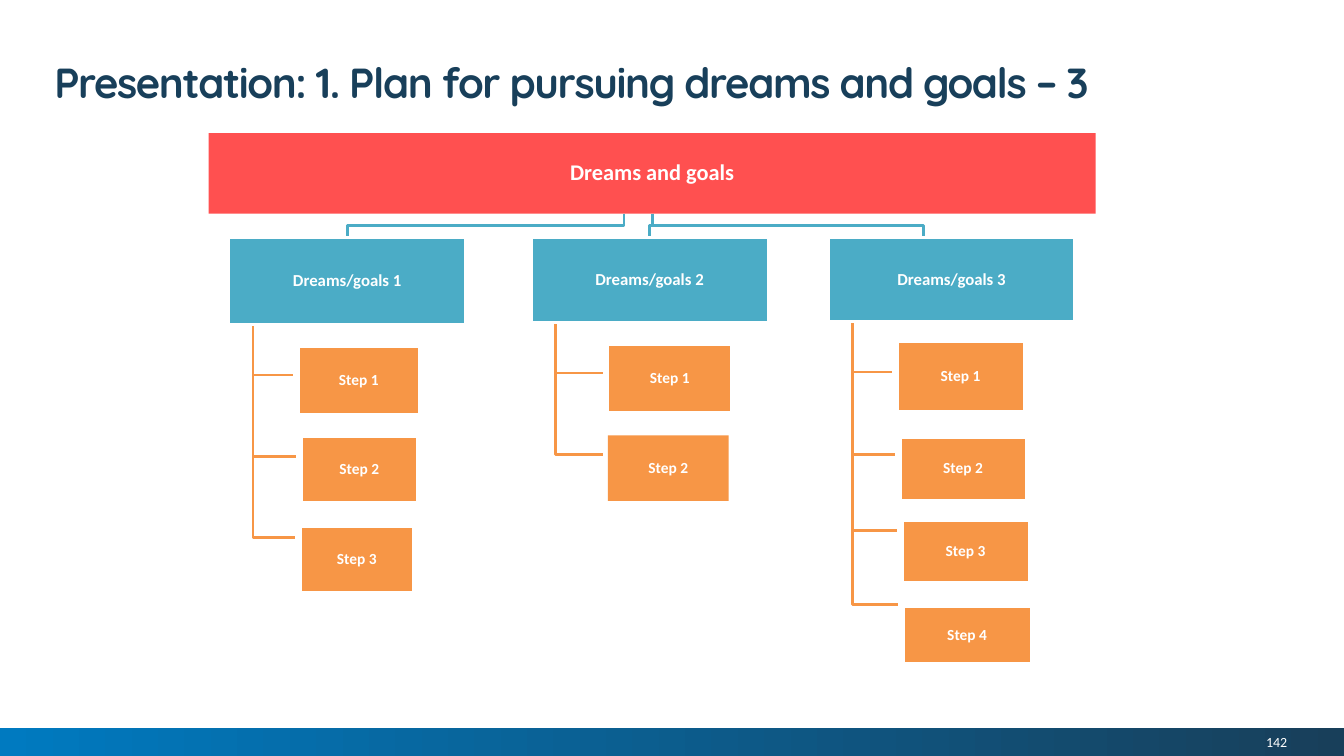
from pptx import Presentation
from pptx import util as u
from pptx.dml import color
from pptx.enum import shapes, text

COLORS = {
    "navy": "183F5A", "blue": "007AC0", "red": "FF5050",
    "teal": "4BACC6", "orange": "F79646", "white": "FFFFFF",
}
CELL = u.Inches(0.1)  # side of one grid column or row
COLUMNS, ROWS = 133.33, 75


def cells(count):
    return round(count * CELL)


def rgb(name):
    return color.RGBColor.from_string(COLORS[name])


class Chart:
    """Draws on one page; every length is in grid columns and rows."""

    font = "Calibri"
    line_width = u.Pt(2)

    def __init__(self, page):
        self.page = page

    def add_words(self, shape, words, size, tint="white", bold=True, font=None,
                  align=text.PP_ALIGN.CENTER, anchor=text.MSO_ANCHOR.MIDDLE,
                  spacing=0.9, inset=(0.1, 0.1), tracking=None):
        frame = shape.text_frame
        frame.word_wrap = True
        frame.vertical_anchor = anchor
        frame.margin_left = frame.margin_right = cells(inset[0])
        frame.margin_top = frame.margin_bottom = cells(inset[1])
        para = frame.paragraphs[0]
        para.alignment = align
        para.line_spacing = spacing
        span = para.add_run()
        span.text = words
        span.font.name = font or self.font
        span.font.size = u.Pt(size)
        span.font.bold = bold
        span.font.color.rgb = rgb(tint)
        if tracking is not None:
            span.font._element.set("spc", str(tracking))

    def label(self, place, words, size, **style):
        box = self.page.shapes.add_textbox(*map(cells, place))
        self.add_words(box, words, size, **style)

    def rectangle(self, place):
        box = self.page.shapes.add_shape(
            shapes.MSO_SHAPE.RECTANGLE, *map(cells, place))
        box.shadow.inherit = False
        box.line.fill.background()
        return box

    def box(self, place, tint, words, size, outlined=True):
        box = self.rectangle(place)
        box.fill.solid()
        box.fill.fore_color.rgb = rgb(tint)
        if outlined:
            box.line.color.rgb = rgb("white")
            box.line.width = self.line_width
        self.add_words(box, words, size)

    def band(self, place, start, end):
        band = self.rectangle(place)
        band.fill.gradient()
        band.fill.gradient_angle = 0
        for stop, tint in zip(band.fill.gradient_stops, (start, end)):
            stop.color.rgb = rgb(tint)

    def elbow(self, points, tint):
        first, *rest = [tuple(map(cells, point)) for point in points]
        builder = self.page.shapes.build_freeform(*first)
        builder.add_line_segments(rest, close=False)
        elbow = builder.convert_to_shape()
        elbow.shadow.inherit = False
        elbow.fill.background()
        elbow.line.color.rgb = rgb(tint)
        elbow.line.width = self.line_width


# Each goal: its box, where its line leaves the root and arrives,
# and its steps as (box, height of the branch, outlined)
ROOT = (20.7, 13.2, 88, 8)
GOALS = [
    ((22.7, 23.6, 23.5, 8.6), (61.9, 34.5), [
        ((29.6, 34.4, 12, 6.7), 37.2, True),
        ((29.9, 43.3, 11.5, 6.6), 45.3, True),
        ((29.8, 52.2, 11.2, 6.6), 53.3, True)]),
    ((52.7, 23.6, 23.5, 8.4), (64.7, 64.4), [
        ((60.3, 34.2, 12.3, 6.7), 37, True),
        ((60.3, 43.2, 12, 6.5), 45.1, False)]),
    ((82.2, 23.6, 24.4, 8.3), (64.7, 91.6), [
        ((89, 33.9, 12.6, 6.9), 36.9, True),
        ((89.3, 43.4, 12.5, 6.2), 45.1, True),
        ((89.5, 51.6, 12.6, 6.2), 52.6, True),
        ((89.6, 60.2, 12.7, 5.6), 60, True)]),
]
TRUNK_INSET, TIP_GAP = 2.4, 0.5
ROOT_BOTTOM, BEND, ARRIVAL = 21.2, 22.4, 23.4


def main():
    deck = Presentation()
    deck.slide_width, deck.slide_height = cells(COLUMNS), cells(ROWS)
    page = deck.slides.add_slide(deck.slide_layouts[6])
    chart = Chart(page)

    # Footer band and page number
    chart.band((0, 72.2, COLUMNS, 2.8), "blue", "navy")
    chart.label((109.7, 72.4, 18, 2.4), "142", 10, bold=False,
                align=text.PP_ALIGN.RIGHT, spacing=1.0, inset=(0, 0))

    # Title
    chart.label((4.4, 5.5, 107.1, 4.7),
                "Presentation: 1. Plan for pursuing dreams and goals – 3", 30,
                tint="navy", font="Quicksand", align=text.PP_ALIGN.LEFT,
                anchor=text.MSO_ANCHOR.TOP, spacing=u.Pt(33),
                inset=(1, 0.5), tracking=-100)

    # Goals with their steps
    for number, (place, (leave, arrive), steps) in enumerate(GOALS, 1):
        left, top, _, height = place
        trunk = left + TRUNK_INSET
        chart.elbow([(leave, ROOT_BOTTOM), (leave, BEND),
                     (arrive, BEND), (arrive, ARRIVAL)], "teal")
        for step, branch, _ in steps:
            chart.elbow([(trunk, top + height), (trunk, branch),
                         (step[0] - TIP_GAP, branch)], "orange")
        chart.box(place, "teal", f"Dreams/goals {number}", 12)
        for index, (step, _, outlined) in enumerate(steps, 1):
            chart.box(step, "orange", f"Step {index}", 11, outlined)

    # Root of the tree
    chart.box(ROOT, "red", "Dreams and goals", 16, outlined=False)

    deck.save("out.pptx")


if __name__ == "__main__":
    main()
